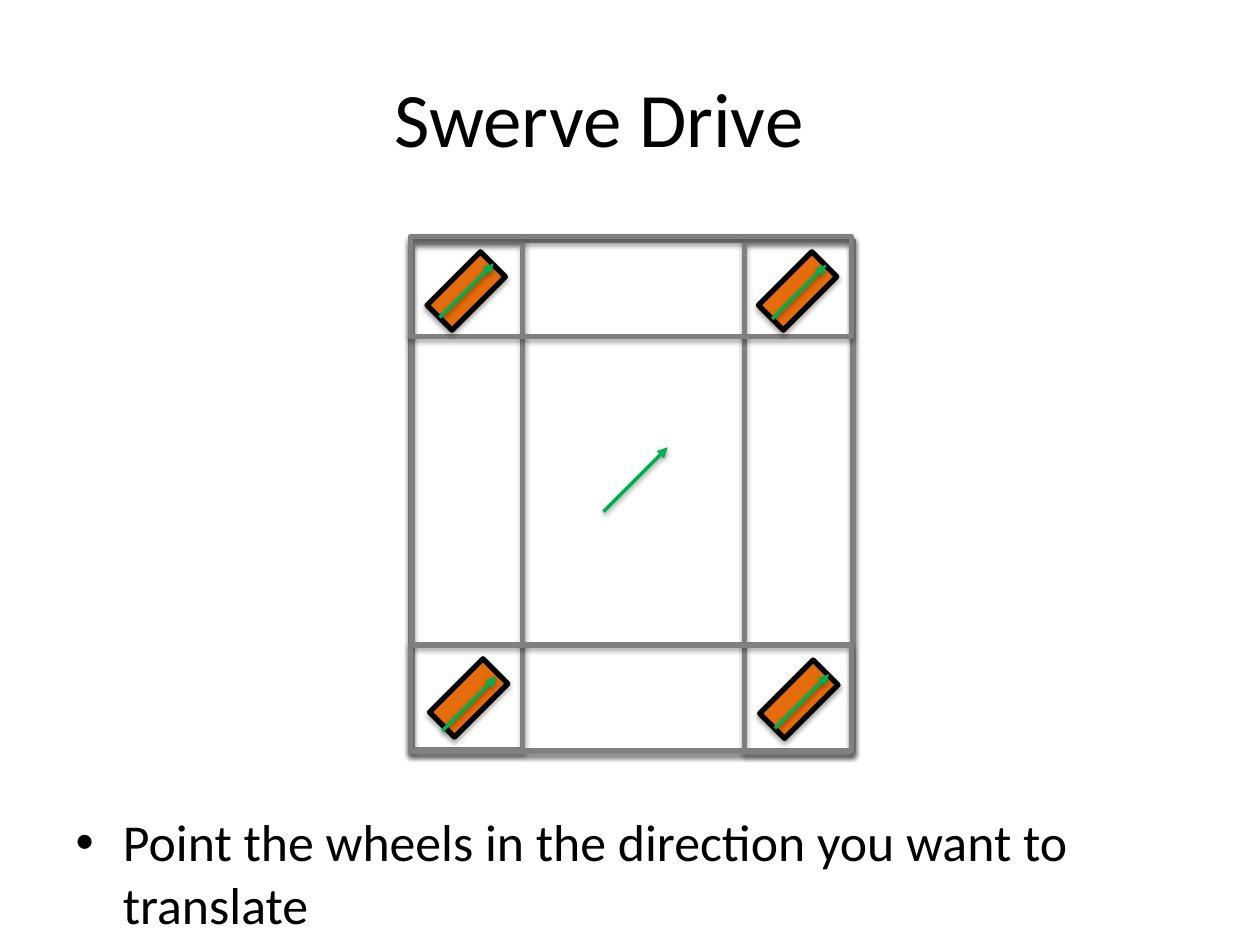
from lxml import etree
from pptx import Presentation
from pptx.dml.color import RGBColor
from pptx.enum import shapes, text
from pptx.oxml import ns
from pptx.util import Inches, Pt

TITLE = "Swerve Drive"
BULLET = "Point the wheels in the direction you want to translate"
GREY, ORANGE, GREEN, BLACK = "808080", "E46C0A", "00B050", "000000"

# Chassis frame and its side and end rails: left, top, width, height
RAILS = [
    (3.26, 1.91, 3.51, 4.05),
    (5.91, 1.91, 0.86, 4.05),
    (3.27, 1.92, 0.88, 4.03),
    (3.26, 1.88, 3.5, 0.79),
    (3.26, 5.12, 3.5, 0.84),
]
# Wheel centre and arrow start
WHEELS = [
    ((3.7, 2.31), (3.49, 2.52)),
    ((6.33, 2.31), (6.13, 2.53)),
    ((3.72, 5.54), (3.51, 5.8)),
    ((6.34, 5.55), (6.15, 5.78)),
]
WHEEL_WIDTH, WHEEL_HEIGHT = 0.28, 0.6
WHEEL_ARROW = 0.43
CENTRE_START, CENTRE_ARROW = (4.79, 4.06), 0.51


def color(value):
    return RGBColor.from_string(value)


def add_shadow(shape, opacity, distance):
    properties = shape._element.spPr
    effects = etree.SubElement(properties, ns.qn("a:effectLst"))
    shadow = etree.SubElement(
        effects, ns.qn("a:outerShdw"), blurRad=str(Pt(3.1)),
        dist=str(Pt(distance)), dir="5400000", rotWithShape="0")
    black = etree.SubElement(shadow, ns.qn("a:srgbClr"), val=BLACK)
    etree.SubElement(black, ns.qn("a:alpha"), val=str(opacity * 1000))


def add_rectangle(parent, box, line, fill=None, rotation=0):
    shape = parent.add_shape(shapes.MSO_SHAPE.RECTANGLE, *map(Inches, box))
    shape.rotation = rotation
    if fill:
        shape.fill.solid()
        shape.fill.fore_color.rgb = color(fill)
    else:
        shape.fill.background()
    shape.line.color.rgb = color(line)
    shape.line.width = Pt(3)
    add_shadow(shape, 35, 1.8)


def add_arrow(parent, start, length):
    """Draw a green arrow up and to the right at 45 degrees."""
    x, y = start
    arrow = parent.add_connector(
        shapes.MSO_CONNECTOR.STRAIGHT,
        *map(Inches, (x, y, x + length, y - length)))
    arrow.line.color.rgb = color(GREEN)
    arrow.line.width = Pt(2)
    etree.SubElement(arrow.line._get_or_add_ln(), ns.qn("a:tailEnd"), type="triangle")
    add_shadow(arrow, 38, 1.6)


def fill_placeholder(placeholder, box, words, size):
    placeholder.left, placeholder.top, placeholder.width, placeholder.height = map(Inches, box)
    frame = placeholder.text_frame
    frame.auto_size = text.MSO_AUTO_SIZE.NONE
    frame.word_wrap = True
    paragraph = frame.paragraphs[0]
    paragraph.space_before = Pt(0)
    run = paragraph.add_run()
    run.text = words
    run.font.name = "Calibri"
    run.font.size = Pt(size)
    run.font.color.rgb = color(BLACK)


def main():
    presentation = Presentation()
    presentation.slide_width, presentation.slide_height = Inches(10), Inches(7.5)
    slide = presentation.slides.add_slide(presentation.slide_layouts[1])

    # Title and bullet
    fill_placeholder(slide.shapes.title, (1.91, 0.3, 5.69, 1.25), TITLE, 44)
    fill_placeholder(slide.placeholders[1], (0.5, 6.38, 9, 1.1), BULLET, 29.6)

    # Chassis
    for box in RAILS:
        add_rectangle(slide.shapes, box, GREY)

    # Wheels, each grouped with its direction arrow
    for (x, y), start in WHEELS:
        group = slide.shapes.add_group_shape()
        box = (x - WHEEL_WIDTH / 2, y - WHEEL_HEIGHT / 2, WHEEL_WIDTH, WHEEL_HEIGHT)
        add_rectangle(group.shapes, box, BLACK, ORANGE, 45)
        add_arrow(group.shapes, start, WHEEL_ARROW)

    # Direction of the whole robot
    add_arrow(slide.shapes, CENTRE_START, CENTRE_ARROW)

    presentation.save("out.pptx")


if __name__ == "__main__":
    main()
